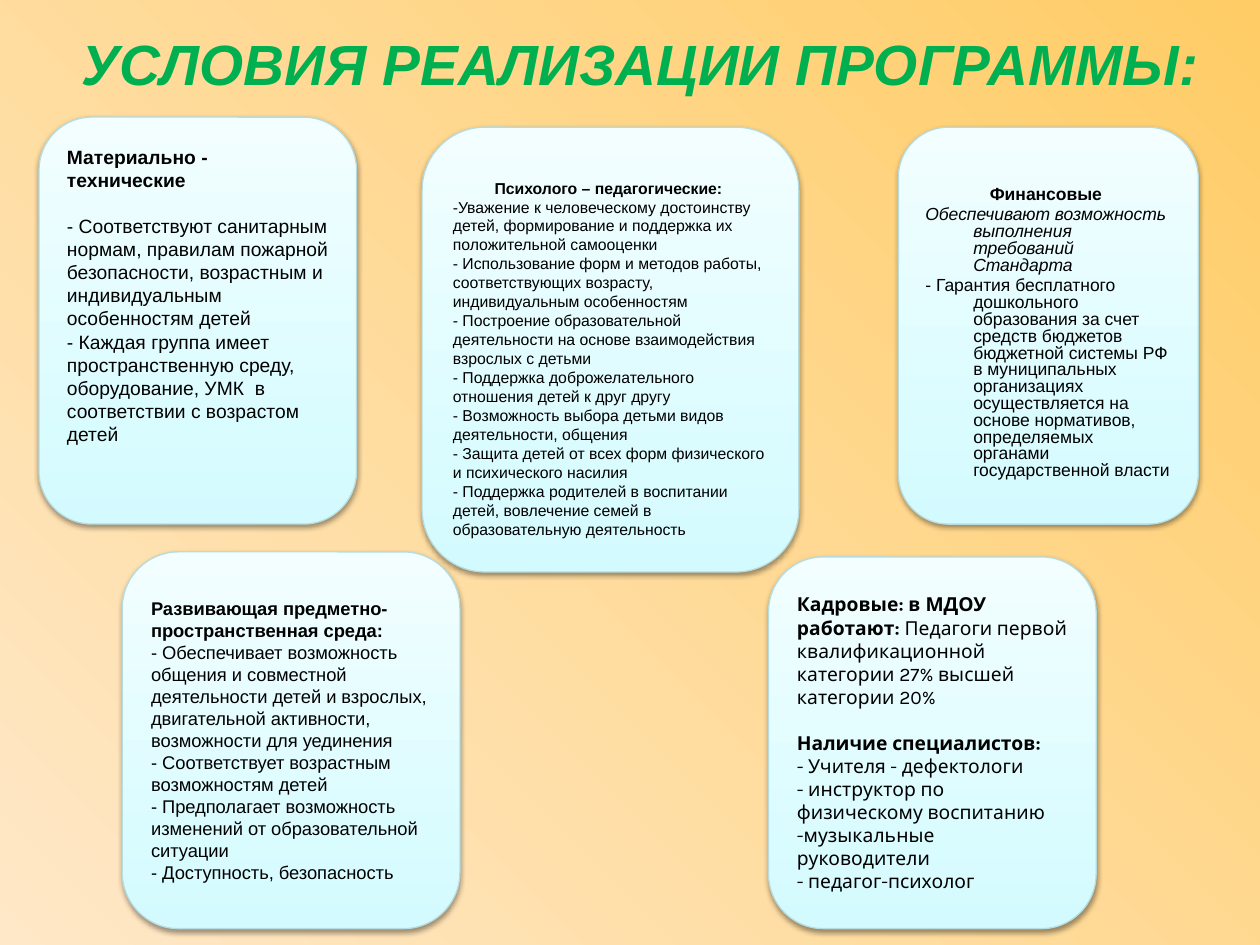
from lxml.etree import SubElement
from pptx import Presentation
from pptx.dml.color import RGBColor
from pptx.enum.shapes import MSO_SHAPE
from pptx.enum.text import MSO_ANCHOR, PP_ALIGN
from pptx.oxml.ns import qn
from pptx.util import Inches, Pt

COLORS = {
    "title": "00B050", "text": "000000", "border": "B6DCDF", "shadow": "000000",
    "page": ("FFE8C8", "FFCC66"), "card": ("D3FBFF", "F2FEFF"),
}
COLUMNS, ROWS = 100, 75
BOLD, ITALIC, PLAIN = {"bold": True}, {"italic": True}, {}
CENTER = {"alignment": PP_ALIGN.CENTER}


class SlideStyle:
    """Holds the style, the grid and the current slide."""

    def __init__(self, deck):
        self.page = deck.slides.add_slide(deck.slide_layouts[5])
        self.column = deck.slide_width / COLUMNS
        self.row = deck.slide_height / ROWS

    def place(self, left, top, width, height):
        return (round(left * self.column), round(top * self.row),
                round(width * self.column), round(height * self.row))

    def gradient(self, fill, colors, angle):
        fill.gradient()
        fill.gradient_angle = angle
        for stop, color in zip(fill.gradient_stops, colors):
            stop.color.rgb = RGBColor.from_string(color)

    def background(self):
        self.gradient(self.page.background.fill, COLORS["page"], 45)

    def span(self, para, text, size, font="Arial", color="text", **format_values):
        span = para.add_run()
        span.text = text
        values = {"name": font, "size": Pt(size), "bold": False, "italic": False}
        for name, value in (values | format_values).items():
            setattr(span.font, name, value)
        span.font.color.rgb = RGBColor.from_string(COLORS[color])

    def title(self, text, area):
        box = self.page.shapes.title
        box.left, box.top, box.width, box.height = self.place(*area)
        box.text_frame.vertical_anchor = MSO_ANCHOR.MIDDLE
        para = box.text_frame.paragraphs[0]
        para.alignment = PP_ALIGN.CENTER
        self.span(para, text, 32.4, color="title", bold=True, italic=True)

    def shadow(self, box):
        box.shadow.inherit = False
        effects = box._element.spPr.find(qn("a:effectLst"))
        outer = SubElement(effects, qn("a:outerShdw"), blurRad=str(Pt(3.1)),
                           dist=str(Pt(1.6)), dir="5400000", rotWithShape="0")
        color = SubElement(outer, qn("a:srgbClr"), val=COLORS["shadow"])
        SubElement(color, qn("a:alpha"), val="38000")

    def card(self, area, paragraphs, size, font="Arial", inset=None, hanging=0, **spacing):
        box = self.page.shapes.add_shape(MSO_SHAPE.ROUNDED_RECTANGLE, *self.place(*area))
        self.gradient(box.fill, COLORS["card"], 90)
        box.line.color.rgb = RGBColor.from_string(COLORS["border"])
        box.line.width = Pt(0.75)
        self.shadow(box)
        frame = box.text_frame
        frame.word_wrap = True
        frame.vertical_anchor = MSO_ANCHOR.MIDDLE
        if inset is not None:
            frame.vertical_anchor = MSO_ANCHOR.TOP
            frame.margin_top = round(inset * self.row)
        for index, (spans, layout) in enumerate(paragraphs):
            para = frame.add_paragraph() if index else frame.paragraphs[0]
            for name, value in ({"alignment": PP_ALIGN.LEFT} | spacing | layout).items():
                setattr(para, name, value)
            if hanging:
                indent = round(hanging * self.column)
                properties = para._element.get_or_add_pPr()
                properties.set("marL", str(indent))
                properties.set("indent", str(-indent))
            for text, look in spans:
                self.span(para, text, size, font, **look)


def line(text, look=PLAIN, **layout):
    return [(text, look)], layout


def main():
    deck = Presentation()
    deck.slide_width, deck.slide_height = Inches(10), Inches(7.5)
    slide = SlideStyle(deck)
    slide.background()
    slide.title("УСЛОВИЯ РЕАЛИЗАЦИИ ПРОГРАММЫ:", (3.3, 1, 95, 7.9))

    # Upper row: material, psychological and financial conditions
    slide.card((3.1, 9.3, 25.2, 32.3), [
        line("Материально - технические", BOLD),
        line("- Соответствуют санитарным нормам, правилам пожарной безопасности, "
             "возрастным и индивидуальным особенностям детей", space_before=Pt(13)),
        line("- Каждая группа имеет пространственную среду, оборудование, УМК  в "
             "соответствии с возрастом детей"),
    ], 11, inset=1)
    slide.card((33.5, 10.1, 29.9, 35.3), [
        line("Психолого – педагогические: ", BOLD, **CENTER),
        line("-Уважение к человеческому достоинству детей, формирование и поддержка "
             "их положительной самооценки"),
        line("- Использование форм и методов работы, соответствующих возрасту, "
             "индивидуальным особенностям"),
        line("- Построение образовательной деятельности на основе взаимодействия "
             "взрослых с детьми"),
        line("- Поддержка доброжелательного отношения детей к друг другу"),
        line("- Возможность выбора детьми видов деятельности, общения"),
        line("- Защита детей от всех форм физического и психического насилия"),
        line("- Поддержка родителей в воспитании детей, вовлечение семей в "
             "образовательную деятельность"),
    ], 9, inset=2.6)
    slide.card((71.3, 10.1, 23.8, 31.5), [
        line("Финансовые ", BOLD, **CENTER),
        line("Обеспечивают возможность выполнения требований Стандарта", ITALIC),
        line("- Гарантия бесплатного дошкольного образования за счет средств бюджетов "
             "бюджетной системы РФ в муниципальных организациях осуществляется на "
             "основе нормативов, определяемых органами государственной власти"),
    ], 10, inset=3.6, hanging=3.8, line_spacing=0.8, space_before=Pt(2))

    # Lower row: environment and staff
    slide.card((9.7, 43.8, 26.8, 29.9), [
        line("Развивающая предметно-пространственная среда:", BOLD),
        line("- Обеспечивает возможность общения и совместной деятельности детей и "
             "взрослых, двигательной активности, возможности для уединения"),
        line("- Соответствует возрастным возможностям детей"),
        line("- Предполагает возможность изменений от образовательной ситуации"),
        line("- Доступность, безопасность"),
    ], 10.5)
    slide.card((61, 44.2, 26, 29.5), [
        ([("Кадровые: в МДОУ работают: ", BOLD),
          ("Педагоги первой квалификационной категории 27% высшей категории 20%", PLAIN)], {}),
        line("Наличие специалистов:", BOLD, space_before=Pt(13)),
        line("- Учителя - дефектологи"),
        line("- инструктор по физическому воспитанию"),
        line("-музыкальные руководители"),
        line("- педагог-психолог"),
    ], 11, font="Karla")

    deck.save("out.pptx")


if __name__ == "__main__":
    main()
